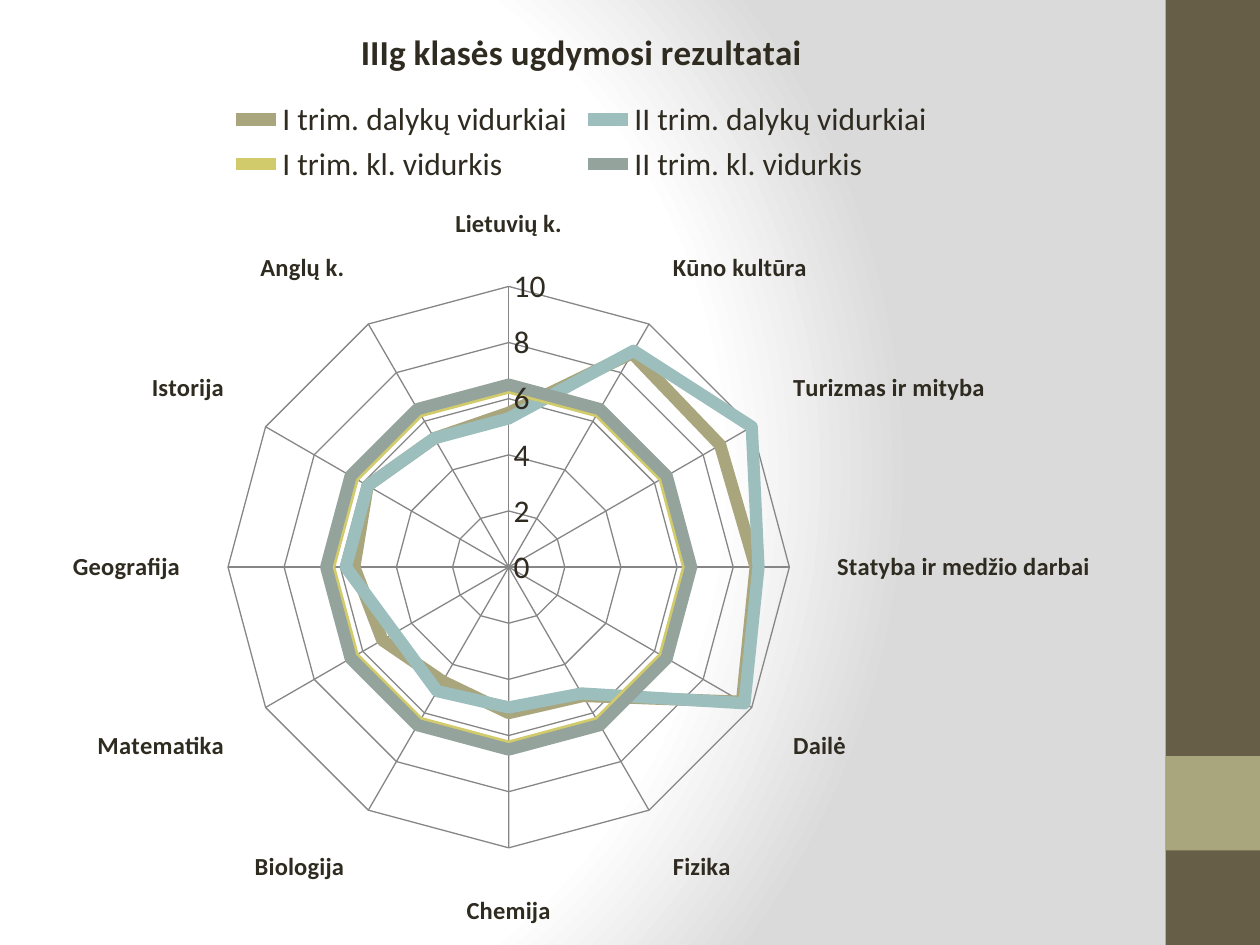
from lxml import etree
from pptx import Presentation
from pptx.chart.data import CategoryChartData
from pptx.dml.color import RGBColor
from pptx.enum.chart import XL_CHART_TYPE as ChartType
from pptx.enum.chart import XL_LEGEND_POSITION as LegendPosition
from pptx.enum.chart import XL_TICK_LABEL_POSITION as LabelPosition
from pptx.enum.chart import XL_TICK_MARK as TickMark
from pptx.enum.shapes import MSO_SHAPE as Shape
from pptx.oxml.ns import qn
from pptx.util import Inches, Pt

INK = RGBColor(0x2F, 0x2B, 0x20)
GRID = RGBColor(0x86, 0x86, 0x86)
BROWN = RGBColor(0x67, 0x5E, 0x47)
OLIVE = RGBColor(0xA9, 0xA5, 0x7C)
TEAL = RGBColor(0x9C, 0xBE, 0xBD)
YELLOW = RGBColor(0xD2, 0xCB, 0x6C)
SAGE = RGBColor(0x95, 0xA3, 0x9D)
WHITE = RGBColor(0xFF, 0xFF, 0xFF)
GRAY = RGBColor(0xDA, 0xDA, 0xDA)

FONT = "Calibri"
TITLE = "IIIg klasės ugdymosi rezultatai"
SUBJECTS = [
    "Lietuvių k.", "Anglų k.", "Istorija", "Geografija", "Matematika", "Biologija",
    "Chemija", "Fizika", "Dailė", "Statyba ir medžio darbai", "Turizmas ir mityba",
    "Kūno kultūra",
]
SERIES = [
    ("I trim. dalykų vidurkiai", OLIVE,
     [5.5, 5.3, 5.8, 5.5, 5.2, 4.7, 5.2, 5.3, 9.6, 8.8, 8.7, 8.8]),
    ("II trim. dalykų vidurkiai", TEAL,
     [5.3, 5.3, 5.8, 5.8, 4.7, 5.1, 5, 5.2, 9.7, 8.9, 10, 8.9]),
    ("I trim. kl. vidurkis", YELLOW, [6.4] * len(SUBJECTS)),
    ("II trim. kl. vidurkis", SAGE, [6.5] * len(SUBJECTS)),
]


def set_background(page):
    """Fill the page with a circular gradient from white to gray."""
    fill = page.background.fill
    fill.gradient()
    gradient = page.background._cSld.find(".//" + qn("a:gradFill"))
    for child in list(gradient):
        gradient.remove(child)
    stops = etree.SubElement(gradient, qn("a:gsLst"))
    for percent, color in ((0, WHITE), (75, WHITE), (100, GRAY)):
        stop = etree.SubElement(stops, qn("a:gs"), pos=str(percent * 1000))
        etree.SubElement(stop, qn("a:srgbClr"), val=str(color))
    circle = etree.SubElement(gradient, qn("a:path"), path="circle")
    etree.SubElement(circle, qn("a:fillToRect"),
                     l="20000", t="50000", r="100000", b="50000")


def add_block(page, top, height, color):
    box = page.shapes.add_shape(Shape.RECTANGLE, Inches(9.25), Inches(top),
                                Inches(0.75), Inches(height))
    box.shadow.inherit = False
    box.fill.solid()
    box.fill.fore_color.rgb = color
    box.line.fill.background()


def style_font(font, size, bold=False):
    font.name = FONT
    font.size = Pt(size)
    font.bold = bold
    font.color.rgb = INK


def style_axis(axis, size, bold=False):
    axis.major_tick_mark = axis.minor_tick_mark = TickMark.NONE
    axis.tick_label_position = LabelPosition.NEXT_TO_AXIS
    axis.has_major_gridlines = True
    for line in (axis.major_gridlines.format.line, axis.format.line):
        line.width = Pt(0.75)
        line.color.rgb = GRID
    style_font(axis.tick_labels.font, size, bold)


def add_title(chart):
    chart.has_title = True
    span = chart.chart_title.text_frame.paragraphs[0].add_run()
    span.text = TITLE
    style_font(span.font, 20, bold=True)
    chart.chart_title.include_in_layout = False


def add_legend(chart):
    chart.has_legend = True
    chart.legend.position = LegendPosition.TOP
    chart.legend.include_in_layout = False
    style_font(chart.legend.font, 18)


def add_radar(page):
    data = CategoryChartData()
    data.categories = SUBJECTS
    for name, _, values in SERIES:
        data.add_series(name, values)
    chart = page.shapes.add_chart(ChartType.RADAR, Inches(-0.02), Inches(-0.04),
                                  Inches(9.27), Inches(7.54), data).chart
    style_font(chart.font, 10)
    add_title(chart)
    add_legend(chart)

    style_axis(chart.category_axis, 14, bold=True)
    chart.category_axis.format.line.fill.background()
    chart.category_axis.reverse_order = True

    scores = chart.value_axis
    style_axis(scores, 18)
    scores.minimum_scale, scores.maximum_scale, scores.major_unit = 0, 10, 2
    scores.tick_labels.number_format = "#,##0"
    scores.tick_labels.number_format_is_linked = False

    plot = chart.plots[0]
    plot.vary_by_categories = False
    for series, (_, color, _) in zip(plot.series, SERIES):
        series.smooth = False
        series.format.line.width = Pt(7)
        series.format.line.color.rgb = color


def main():
    deck = Presentation()
    deck.slide_width, deck.slide_height = Inches(10), Inches(7.5)
    page = deck.slides.add_slide(deck.slide_layouts[6])
    set_background(page)
    add_block(page, 0, 7.5, BROWN)
    add_block(page, 6, 0.75, OLIVE)
    add_radar(page)
    deck.save("out.pptx")


if __name__ == "__main__":
    main()
